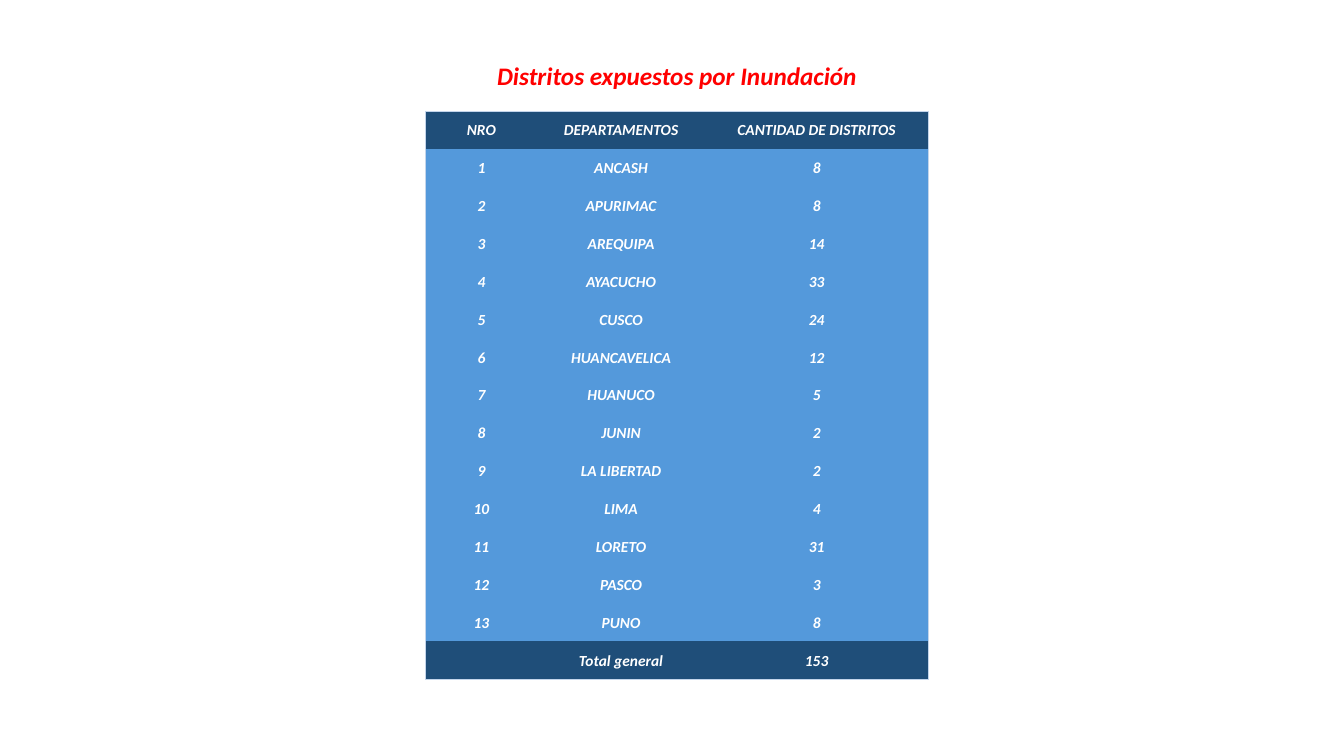
from dataclasses import dataclass

from lxml.etree import SubElement
from pptx import Presentation
from pptx.dml.color import RGBColor
from pptx.enum.text import MSO_ANCHOR, MSO_AUTO_SIZE, PP_ALIGN
from pptx.oxml.ns import qn
from pptx.util import Inches, Pt

TITLE = "Distritos expuestos por Inundación"
HEADER = ("NRO", "DEPARTAMENTOS", "CANTIDAD DE DISTRITOS")
DISTRICTS = {
    "ANCASH": 8,
    "APURIMAC": 8,
    "AREQUIPA": 14,
    "AYACUCHO": 33,
    "CUSCO": 24,
    "HUANCAVELICA": 12,
    "HUANUCO": 5,
    "JUNIN": 2,
    "LA LIBERTAD": 2,
    "LIMA": 4,
    "LORETO": 31,
    "PASCO": 3,
    "PUNO": 8,
}
TOTAL = ("", "Total general", 153)

SLIDE_SIZE = (13.33, 7.5)
TITLE_BOX = (4.81, 0.55, 3.81, 0.4)
TABLE_LEFT, TABLE_TOP = 4.22, 1.1
COLUMN_WIDTHS = (1.11, 1.66, 2.22)
ROW_HEIGHT = 5.64 / 15
CELL_MARGIN = 0.01


@dataclass(frozen=True)
class Theme:
    font: str = "Calibri"
    title_size: float = 18
    table_size: float = 11
    title: str = "FF0000"
    text: str = "FFFFFF"
    band: str = "1F4E79"
    body: str = "5499DB"
    border: str = "C4D5EB"
    border_width: float = 0.5


THEME = Theme()


def format_text(frame, size, color):
    para = frame.paragraphs[0]
    para.alignment = PP_ALIGN.CENTER
    for span in para.runs:
        font = span.font
        font.name, font.size = THEME.font, Pt(size)
        font.bold = font.italic = True
        font.color.rgb = RGBColor.from_string(color)


def set_borders(cell, outer_sides):
    """Draw a thin line on the outer sides and none on the others."""
    properties = cell._tc.get_or_add_tcPr()
    for side in ("L", "R", "T", "B"):
        line = SubElement(properties, qn(f"a:ln{side}"), w=str(Pt(THEME.border_width)))
        if side in outer_sides:
            fill = SubElement(line, qn("a:solidFill"))
            SubElement(fill, qn("a:srgbClr"), val=THEME.border)
        else:
            SubElement(line, qn("a:noFill"))


def add_title(page):
    title = page.shapes.title
    title.left, title.top, title.width, title.height = map(Inches, TITLE_BOX)
    frame = title.text_frame
    frame.text = TITLE
    frame.word_wrap = False
    frame.auto_size = MSO_AUTO_SIZE.SHAPE_TO_FIT_TEXT
    frame.vertical_anchor = MSO_ANCHOR.TOP
    format_text(frame, THEME.title_size, THEME.title)


def add_district_table(page):
    numbered = [(number, *entry) for number, entry in enumerate(DISTRICTS.items(), 1)]
    rows = [HEADER, *numbered, TOTAL]
    last_row, last_column = len(rows) - 1, len(HEADER) - 1
    table = page.shapes.add_table(
        len(rows), len(HEADER), Inches(TABLE_LEFT), Inches(TABLE_TOP),
        Inches(sum(COLUMN_WIDTHS)), Inches(ROW_HEIGHT * len(rows)),
    ).table
    table.first_row = table.horz_banding = False
    for column, width in zip(table.columns, COLUMN_WIDTHS):
        column.width = Inches(width)

    for r, values in enumerate(rows):
        table.rows[r].height = Inches(ROW_HEIGHT)
        for c, value in enumerate(values):
            cell = table.cell(r, c)
            edges = {"L": c == 0, "R": c == last_column, "T": r == 0, "B": r == last_row}
            set_borders(cell, [side for side, is_outer in edges.items() if is_outer])
            cell.fill.solid()
            color = THEME.band if r in (0, last_row) else THEME.body
            cell.fill.fore_color.rgb = RGBColor.from_string(color)
            cell.vertical_anchor = MSO_ANCHOR.MIDDLE
            cell.margin_left = cell.margin_right = cell.margin_top = Inches(CELL_MARGIN)
            cell.margin_bottom = 0
            cell.text_frame.text = str(value)
            format_text(cell.text_frame, THEME.table_size, THEME.text)


def main():
    deck = Presentation()
    deck.slide_width, deck.slide_height = map(Inches, SLIDE_SIZE)
    title_only = deck.slide_layouts.get_by_name("Title Only")
    page = deck.slides.add_slide(title_only)
    add_title(page)
    add_district_table(page)
    deck.save("out.pptx")


if __name__ == "__main__":
    main()
